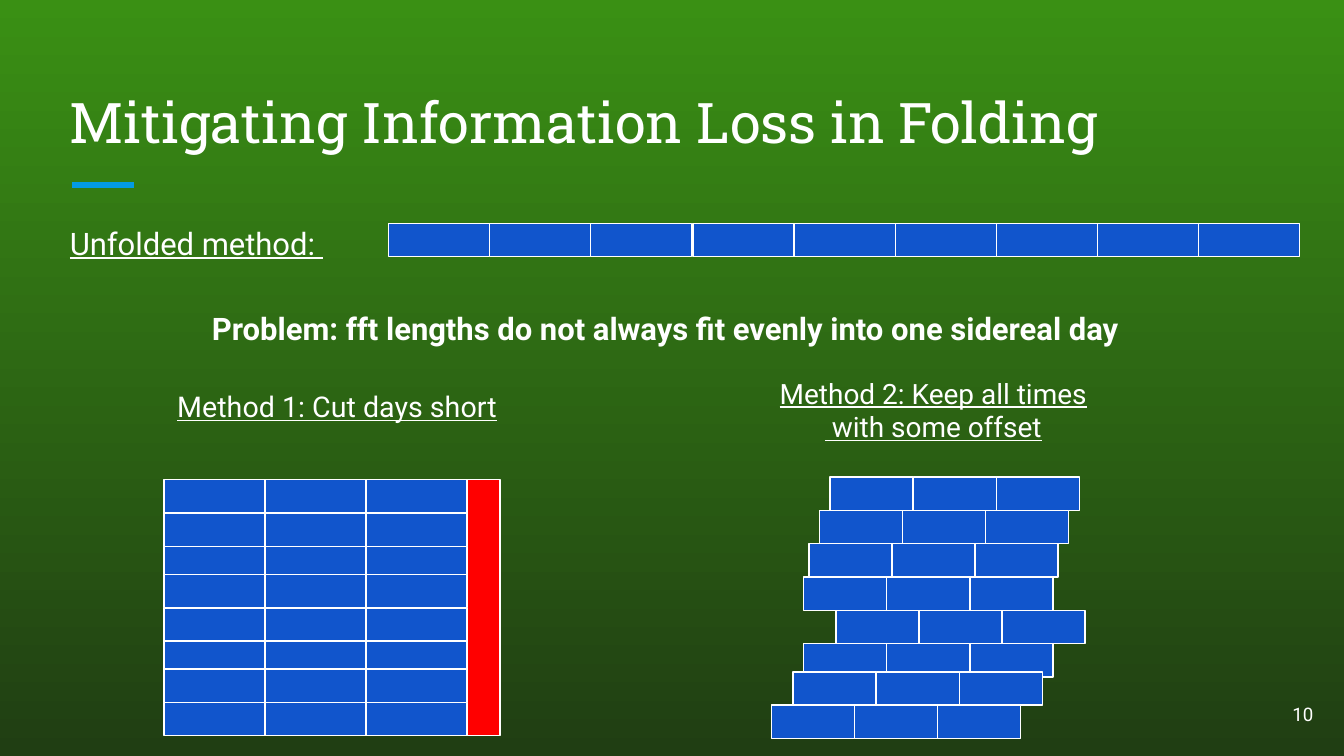
from pptx import Presentation
from pptx.dml.color import RGBColor
from pptx.enum.shapes import MSO_CONNECTOR, MSO_SHAPE
from pptx.enum.text import MSO_ANCHOR, PP_ALIGN
from pptx.oxml.ns import qn
from pptx.util import Cm, Pt

RECTANGLE = MSO_SHAPE.RECTANGLE
STRAIGHT = MSO_CONNECTOR.STRAIGHT
TOP, MIDDLE, BOTTOM = MSO_ANCHOR.TOP, MSO_ANCHOR.MIDDLE, MSO_ANCHOR.BOTTOM
LEFT, CENTER, RIGHT = PP_ALIGN.LEFT, PP_ALIGN.CENTER, PP_ALIGN.RIGHT

THEME = {
    "gradient": ("3A9014", "203E13"),
    "text": "FFFFFF",
    "accent": "039BE5",
    "block": "1155CC",
    "cut": "FF0000",
    "heading_font": "Roboto Slab",
    "body_font": "Roboto",
    "title_size": 30,
    "label_size": 16.6,
    "method_1_size": 15.3,
    "method_2_size": 15,
    "number_size": 10,
}

TEXTS = [
    {"lines": ["Mitigating Information Loss in Folding"],
     "box": (1.07, 1.27, 23.24, 1.91), "anchor": BOTTOM,
     "font": {"name": THEME["heading_font"], "size": Pt(THEME["title_size"])}},
    {"lines": ["Unfolded method: "], "box": (1.07, 4.04, 7.01, 1.19),
     "paragraph": {"line_spacing": 0.95, "space_after": Pt(12)},
     "font": {"size": Pt(THEME["label_size"]), "underline": True}},
    {"lines": ["Problem: fft lengths do not always fit evenly into one sidereal day"],
     "box": (1.73, 5.66, 21.67, 1.19),
     "paragraph": {"alignment": CENTER, "line_spacing": 0.95, "space_after": Pt(12)},
     "font": {"size": Pt(THEME["label_size"]), "bold": True}},
    {"lines": ["Method 1: Cut days short"], "box": (3.1, 7.01, 7.01, 1.19),
     "paragraph": {"line_spacing": 1.15, "space_after": Pt(12)},
     "font": {"size": Pt(THEME["method_1_size"]), "underline": True}},
    {"lines": ["Method 2: Keep all times", " with some offset"],
     "box": (13.74, 6.86, 7.8, 1.63), "paragraph": {"alignment": CENTER},
     "font": {"size": Pt(THEME["method_2_size"]), "underline": True}},
    {"lines": ["10"], "box": (23.55, 12.95, 1.52, 1.09), "anchor": MIDDLE,
     "paragraph": {"alignment": RIGHT},
     "font": {"size": Pt(THEME["number_size"])}},
]

BLOCKS_PER_DAY = 3
DAYS = 8
BLOCK_HEIGHT = 0.63
OVERLAP = 0.1
WIDE_BLOCK, NARROW_BLOCK = 1.91, 1.57
UNFOLDED_TOP, UNFOLDED_LEFTS = 4.22, (7.34, 13.1, 18.83)
CUT_LEFT, CUT_TOP = 3.1, 9.07
CUT_STRIP = (8.82, 9.07, 0.63, 4.83)
OFFSET_TOP = 9.02
OFFSET_LEFTS = (15.69, 15.49, 15.29, 15.19, 15.8, 15.19, 14.99, 14.58)
ACCENT_LINE = (1.37, 3.5, 2.54, 3.5)


def color(name):
    return RGBColor.from_string(name)


def apply(target, values):
    for name, value in values.items():
        setattr(target, name, value)


def add_background(slide):
    fill = slide.background.fill
    fill.gradient()
    fill.gradient_angle = 270
    for position, (stop, name) in enumerate(zip(fill.gradient_stops, THEME["gradient"])):
        stop.position = position
        stop.color.rgb = color(name)


def add_accent_line(slide):
    connector = slide.shapes.add_connector(STRAIGHT, *map(Cm, ACCENT_LINE))
    connector.line.color.rgb = color(THEME["accent"])
    connector.line.width = Pt(3)
    properties = connector._element.spPr
    properties.append(properties.makeelement(qn("a:effectLst"), {}))


def add_text(slide, item):
    frame = slide.shapes.add_textbox(*map(Cm, item["box"])).text_frame
    margins = dict.fromkeys(
        ("margin_left", "margin_top", "margin_right", "margin_bottom"), Cm(0.25))
    apply(frame, {"word_wrap": True, "vertical_anchor": item.get("anchor", TOP), **margins})
    frame.text = "\n".join(item["lines"])
    for paragraph in frame.paragraphs:
        apply(paragraph, {"alignment": LEFT, **item.get("paragraph", {})})
        for run in paragraph.runs:
            apply(run.font, {"name": THEME["body_font"], **item["font"]})
            run.font.color.rgb = color(THEME["text"])


def add_block(slide, box, fill):
    shape = slide.shapes.add_shape(RECTANGLE, *map(Cm, box))
    shape.shadow.inherit = False
    shape.fill.solid()
    shape.fill.fore_color.rgb = color(fill)
    shape.line.color.rgb = color(THEME["text"])
    shape.line.width = Pt(0.75)


def add_day(slide, left, top, width):
    for index in range(BLOCKS_PER_DAY):
        add_block(slide, (left + index * width, top, width, BLOCK_HEIGHT), THEME["block"])


def row_top(first, day, days_per_overlap):
    return first + day * BLOCK_HEIGHT - day // days_per_overlap * OVERLAP


def main():
    """Build the slide on folding methods and save it."""
    presentation = Presentation()
    presentation.slide_width, presentation.slide_height = Cm(25.4), Cm(14.29)
    slide = presentation.slides.add_slide(presentation.slide_layouts[6])
    add_background(slide)
    add_accent_line(slide)
    for item in TEXTS:
        add_text(slide, item)
    for left in UNFOLDED_LEFTS:
        add_day(slide, left, UNFOLDED_TOP, WIDE_BLOCK)
    add_block(slide, CUT_STRIP, THEME["cut"])
    for day in range(DAYS):
        add_day(slide, CUT_LEFT, row_top(CUT_TOP, day, 3), WIDE_BLOCK)
    for day, left in enumerate(OFFSET_LEFTS):
        add_day(slide, left, row_top(OFFSET_TOP, day, 6), NARROW_BLOCK)
    presentation.save("out.pptx")


if __name__ == "__main__":
    main()
